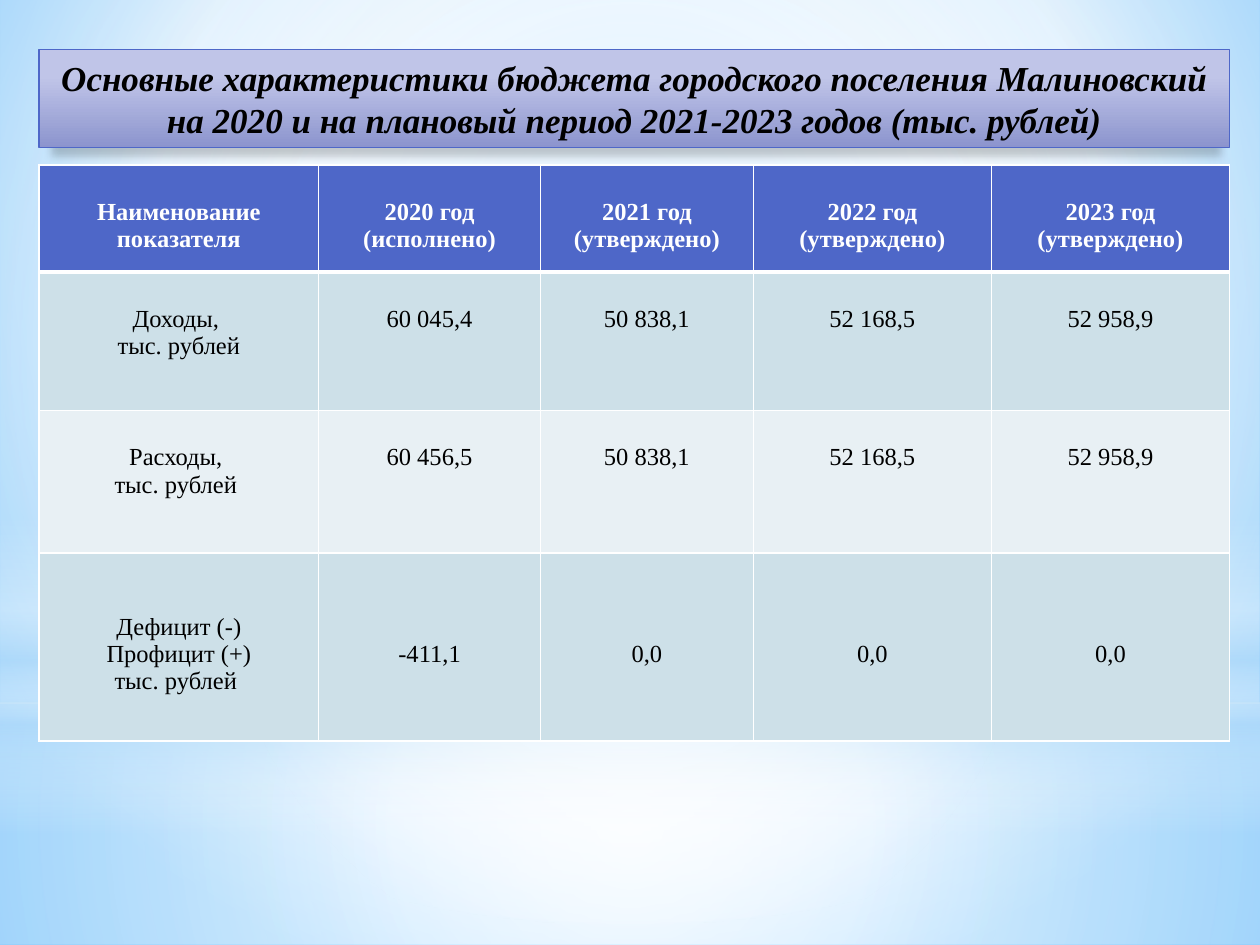
from lxml.etree import SubElement
from pptx import Presentation
from pptx.dml.color import RGBColor
from pptx.enum.shapes import MSO_SHAPE
from pptx.enum.text import MSO_ANCHOR, PP_ALIGN
from pptx.oxml import parse_xml
from pptx.oxml.ns import nsdecls, qn
from pptx.util import Inches, Pt

# The slide is a grid of 10 columns by 7.5 rows
COLUMNS, ROWS = 10, 7.5
COLORS = {"white": "FFFFFF", "black": "000000", "accent": "4E67C8",
          "band": "CDE0E8", "light": "E8F0F4", "haze": "B4DCFA",
          "sky": "9ED5FF", "deep sky": "5BB9FF",
          "title top": "C0C5E8", "title bottom": "8C94CE"}
FONT = "Times New Roman"
CENTER = (50, 50, 50, 50)
LINE_HEIGHT = 0.215

TITLE = ("Основные характеристики бюджета городского поселения Малиновский "
         "на 2020 и на плановый период 2021-2023 годов (тыс. рублей)")
COLUMN_WIDTHS = (2.22, 1.76, 1.69, 1.89, 1.89)
# Row height, fill, lines above the label, lines above the values, texts
TABLE_ROWS = [
    (0.85, "accent", 1, 1, ["Наименование показателя", "2020 год (исполнено)",
                            "2021 год (утверждено)", "2022 год (утверждено)",
                            "2023 год (утверждено)"]),
    (1.1, "band", 1, 1, ["Доходы, \nтыс. рублей", "60 045,4", "50 838,1",
                         "52 168,5", "52 958,9"]),
    (1.13, "light", 1, 1, ["Расходы, \nтыс. рублей ", "60 456,5", "50 838,1",
                           "52 168,5", "52 958,9"]),
    (1.49, "band", 2, 3, ["Дефицит (-)\nПрофицит (+)\nтыс. рублей ", "-411,1",
                          "0,0", "0,0", "0,0"]),
]


def rgb(name):
    return RGBColor.from_string(COLORS[name])


def set_gradient(holder, stops, focus=None):
    """Swap the solid fill in holder for a vertical or a circular gradient."""
    marks = "".join(
        f'<a:gs pos="{place * 1000}"><a:srgbClr val="{COLORS[name]}">'
        f'<a:alpha val="{opacity * 1000}"/></a:srgbClr></a:gs>'
        for place, name, opacity in stops)
    if focus:
        sides = " ".join(f'{side}="{share * 1000}"'
                         for side, share in zip("ltrb", focus))
        course = f'<a:path path="circle"><a:fillToRect {sides}/></a:path>'
    else:
        course = '<a:lin ang="5400000" scaled="0"/>'
    gradient = parse_xml(f'<a:gradFill {nsdecls("a")} rotWithShape="1">'
                         f'<a:gsLst>{marks}</a:gsLst>{course}</a:gradFill>')
    holder.replace(holder.find(qn("a:solidFill")), gradient)


def add_panel(page, box, stops, focus=None, kind=MSO_SHAPE.RECTANGLE):
    panel = page.shapes.add_shape(kind, *map(Inches, box))
    panel.shadow.inherit = False
    panel.fill.solid()
    set_gradient(panel.element.spPr, stops, focus)
    panel.line.fill.background()
    return panel


def format_text(frame, **values):
    values = {"name": FONT, **values}
    color = values.pop("color")
    for para in frame.paragraphs:
        para.alignment = PP_ALIGN.CENTER
        for span in para.runs:
            for key, value in values.items():
                setattr(span.font, key, value)
            span.font.color.rgb = rgb(color)


def add_backdrop(page, box):
    left, top, width, height = box
    page.background.fill.solid()
    set_gradient(page.element.find(".//" + qn("p:bgPr")),
                 [(0, "sky", 100), (60, "white", 100), (100, "deep sky", 100)],
                 (20, 10, 20, 60))
    horizon = 5.58
    # Ground, sky, band of haze and central glow
    add_panel(page, (left, top + horizon, width, height - horizon),
              [(0, "white", 91), (37, "white", 76), (100, "haze", 79)], CENTER)
    add_panel(page, (left, top, width, horizon),
              [(0, "white", 89), (48, "white", 62), (100, "haze", 79)], CENTER)
    add_panel(page, (left, top + 4.12, width, 2.5),
              [(0, "white", 0), (29, "white", 30), (45, "haze", 40),
               (55, "white", 26), (65, "haze", 60), (100, "white", 0)])
    add_panel(page, (left, top + 1.75, width, horizon),
              [(0, "white", 100), (56, "white", 0)], CENTER, MSO_SHAPE.OVAL)


def add_title(page, box):
    banner = add_panel(page, box, [(28, "title top", 100),
                                   (100, "title bottom", 100)])
    banner.line.color.rgb = rgb("accent")
    banner.line.width = Pt(0.75)
    # Soft shadow under the banner
    effects = banner.element.spPr.find(qn("a:effectLst"))
    effects.append(parse_xml(
        f'<a:outerShdw {nsdecls("a")} blurRad="{Pt(5)}" dist="{Pt(4)}" '
        f'dir="5400000" sx="98000" algn="t" rotWithShape="0"><a:srgbClr '
        f'val="{COLORS["black"]}"><a:alpha val="20000"/></a:srgbClr>'
        f'</a:outerShdw>'))
    frame = banner.text_frame
    frame.word_wrap = True
    frame.vertical_anchor = MSO_ANCHOR.MIDDLE
    frame.text = TITLE
    format_text(frame, size=Pt(20), bold=True, italic=True, color="black")


def set_borders(cell, widths):
    properties = cell._tc.get_or_add_tcPr()
    for index, (side, width) in enumerate(zip("LRTB", widths)):
        edge = parse_xml(f'<a:ln{side} {nsdecls("a")} w="{Pt(width)}"/>')
        fill = SubElement(edge, qn("a:solidFill"))
        SubElement(fill, qn("a:srgbClr"), val=COLORS["white"])
        properties.insert(index, edge)


def add_budget_table(page, box):
    table = page.shapes.add_table(len(TABLE_ROWS), len(COLUMN_WIDTHS),
                                  *map(Inches, box)).table
    table.horz_banding = False
    for column, width in zip(table.columns, COLUMN_WIDTHS):
        column.width = Inches(width)
    for y, (height, fill, label_drop, value_drop, texts) in enumerate(TABLE_ROWS):
        table.rows[y].height = Inches(height)
        header = y == 0
        for x, text in enumerate(texts):
            cell = table.cell(y, x)
            cell.text = text
            drop = value_drop if x else label_drop
            cell.margin_top = Inches(0.05 + drop * LINE_HEIGHT)
            cell.fill.solid()
            cell.fill.fore_color.rgb = rgb(fill)
            set_borders(cell, (1, 1, 3 if y == 1 else 1, 3 if header else 1))
            format_text(cell.text_frame, size=Pt(14), bold=header,
                        color="white" if header else "black")


def main():
    deck = Presentation()
    deck.slide_width, deck.slide_height = Inches(COLUMNS), Inches(ROWS)
    page = deck.slides.add_slide(deck.slide_layouts[6])
    left, width = 0.31, sum(COLUMN_WIDTHS)
    add_backdrop(page, (0, 0, COLUMNS, ROWS))
    add_budget_table(page, (left, 1.31, width, sum(row[0] for row in TABLE_ROWS)))
    add_title(page, (left, 0.39, width, 0.78))
    deck.save("out.pptx")


if __name__ == "__main__":
    main()
